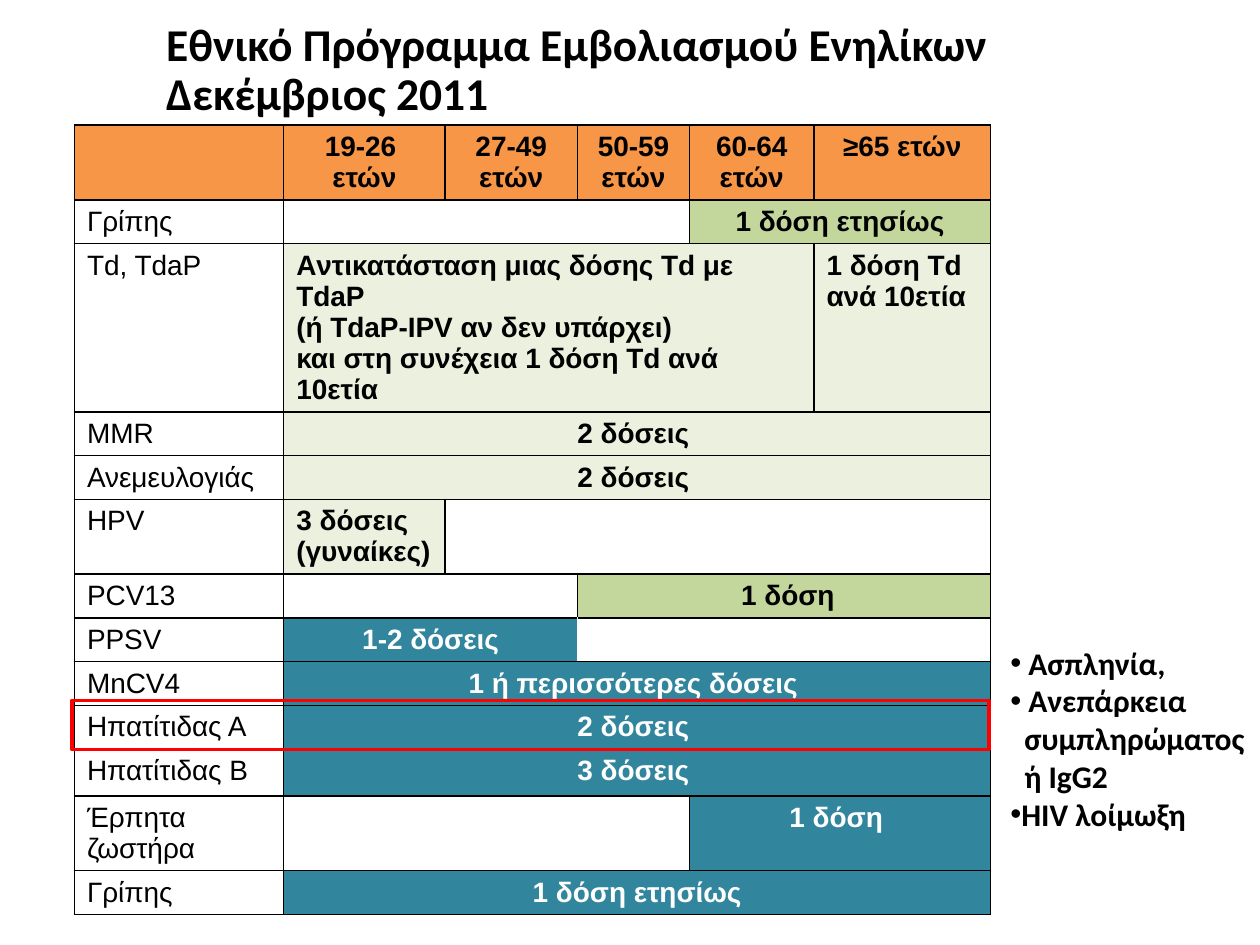
"""Build the adult vaccination schedule slide."""
from lxml.etree import SubElement
from pptx import Presentation
from pptx.dml.color import RGBColor
from pptx.enum.shapes import MSO_SHAPE
from pptx.enum.text import MSO_AUTO_SIZE, PP_ALIGN
from pptx.oxml.ns import qn
from pptx.util import Cm, Pt

BLACK, WHITE, RED = "000000", "FFFFFF", "FF0000"
ORANGE, GREEN, PALE, TEAL = "F79646", "C3D69B", "EBF1DE", "31859C"


def paint(form, tone):
    form.solid()
    form.fore_color.rgb = RGBColor.from_string(tone)


def write(par, text, size, face, tone=BLACK, bold=True):
    run = par.add_run()
    run.text = text
    run.font.size = Pt(size)
    run.font.name = face
    run.font.bold = bold
    paint(run.font.fill, tone)


deck = Presentation()
deck.slide_width, deck.slide_height = Cm(25.4), Cm(19.05)
slide = deck.slides.add_slide(deck.slide_layouts[6])

widths = [4.22, 3.25, 2.67, 2.26, 2.51, 3.56]
rows = [
    (1.19, "", [(1, "19-26 \nετών", ORANGE), (1, "27-49 ετών", ORANGE),
                (1, "50-59\nετών", ORANGE), (1, "60-64 ετών", ORANGE),
                (1, "≥65 ετών", ORANGE)]),
    (0.69, "Γρίπης", [(3, "", WHITE), (2, "1 δόση ετησίως", GREEN)]),
    (1.68, "Td, TdaP", [
        (4, "Aντικατάσταση μιας δόσης Td με TdaP\n(ή ΤdaP-IPV αν δεν υπάρχει)\n"
            "και στη συνέχεια 1 δόση Td ανά 10ετία", PALE),
        (1, "1 δόση Td\nανά 10ετία", PALE)]),
    (0.69, "MMR", [(5, "2 δόσεις ", PALE)]),
    (0.69, "Ανεμευλογιάς", [(5, "2 δόσεις ", PALE)]),
    (1.19, "HPV", [(1, "3 δόσεις\n(γυναίκες)", PALE), (4, "", WHITE)]),
    (0.69, "PCV13", [(2, "", WHITE), (3, " 1 δόση", GREEN)]),
    (0.69, "PPSV", [(2, "1-2 δόσεις", TEAL), (3, "", WHITE)]),
    (0.69, "MnCV4", [(5, "1 ή περισσότερες δόσεις ", TEAL)]),
    (0.69, "Ηπατίτιδας Α", [(5, "2 δόσεις ", TEAL)]),
    (0.94, "Ηπατίτιδας Β", [(5, "3 δόσεις ", TEAL)]),
    (0.84, "Έρπητα ζωστήρα", [(3, "", WHITE), (2, "1 δόση ", TEAL)]),
    (0.69, "Γρίπης", [(5, "1 δόση ετησίως", TEAL)]),
]
grid = slide.shapes.add_table(
    len(rows), len(widths), Cm(1.5), Cm(2.52), Cm(sum(widths)),
    Cm(sum(row[0] for row in rows))).table
grid.first_row = grid.horz_banding = False
for col, width in zip(grid.columns, widths):
    col.width = Cm(width)

for y, (high, label, doses) in enumerate(rows):
    grid.rows[y].height = Cm(high)
    x = 0
    for span, text, tone in [(1, label, WHITE if y else ORANGE)] + doses:
        edges = dict.fromkeys("LRTB", BLACK)
        if label == "PPSV" and x:
            edges["R" if text else "L"] = WHITE
        for k in range(x, x + span):
            cell = grid.cell(y, k)
            props = cell._tc.get_or_add_tcPr()
            for side, hue in edges.items():
                line = SubElement(props, qn("a:ln" + side), w="12700")
                solid = SubElement(line, qn("a:solidFill"))
                SubElement(solid, qn("a:srgbClr"), val=hue)
            paint(cell.fill, tone)
        cell = grid.cell(y, x)
        if span > 1:
            cell.merge(grid.cell(y, x + span - 1))
        left = x == 0 or (y and "\n" in text)
        for n, part in enumerate(text.split("\n")):
            frame = cell.text_frame
            par = frame.add_paragraph() if n else frame.paragraphs[0]
            par.alignment = PP_ALIGN.LEFT if left else PP_ALIGN.CENTER
            if part:
                ink = WHITE if tone == TEAL else BLACK
                write(par, part, 16, "Arial", ink, x > 0)
        for k in range(x, x + span):
            last = grid.cell(y, k).text_frame.paragraphs[-1]
            end = SubElement(last._p, qn("a:endParaRPr"), sz="1600")
            SubElement(end, qn("a:latin"), typeface="Arial")
        x += span

title = slide.shapes.add_textbox(Cm(3.1), Cm(0.33), Cm(17.22), Cm(3.38)).text_frame
title.word_wrap = False
lines = ["Εθνικό Πρόγραμμα Εμβολιασμού Ενηλίκων", "Δεκέμβριος 2011"]
for n, text in enumerate(lines):
    par = title.add_paragraph() if n else title.paragraphs[0]
    par.line_spacing = 0.9
    write(par, text, 26, "Calibri")

group = slide.shapes.add_group_shape()
frame = group.shapes.add_shape(
    MSO_SHAPE.RECTANGLE, Cm(1.45), Cm(14.12), Cm(18.49), Cm(0.99))
frame.shadow.inherit = False
frame.fill.background()
paint(frame.line.fill, RED)
frame.line.width = Pt(2)

notes = group.shapes.add_textbox(Cm(20.12), Cm(12.85), Cm(5.28), Cm(4.11)).text_frame
notes.word_wrap = False
notes.auto_size = MSO_AUTO_SIZE.SHAPE_TO_FIT_TEXT
risks = [("Ασπληνία,", 0.36, True), ("Ανεπάρκεια", 0.36, True),
         ("συμπληρώματος", 0.28, False), ("ή IgG2", 0.28, False),
         ("ΗΙV λοίμωξη", 0.2, True)]
for n, (text, inset, dot) in enumerate(risks):
    par = notes.add_paragraph() if n else notes.paragraphs[0]
    props = par._p.get_or_add_pPr()
    props.set("marL", str(Cm(inset)))
    if dot:
        props.set("indent", str(-Cm(inset)))
        SubElement(props, qn("a:buFont"), typeface="Arial")
        SubElement(props, qn("a:buChar"), char="•")
    write(par, text, 18, "Calibri")

deck.save("out.pptx")
